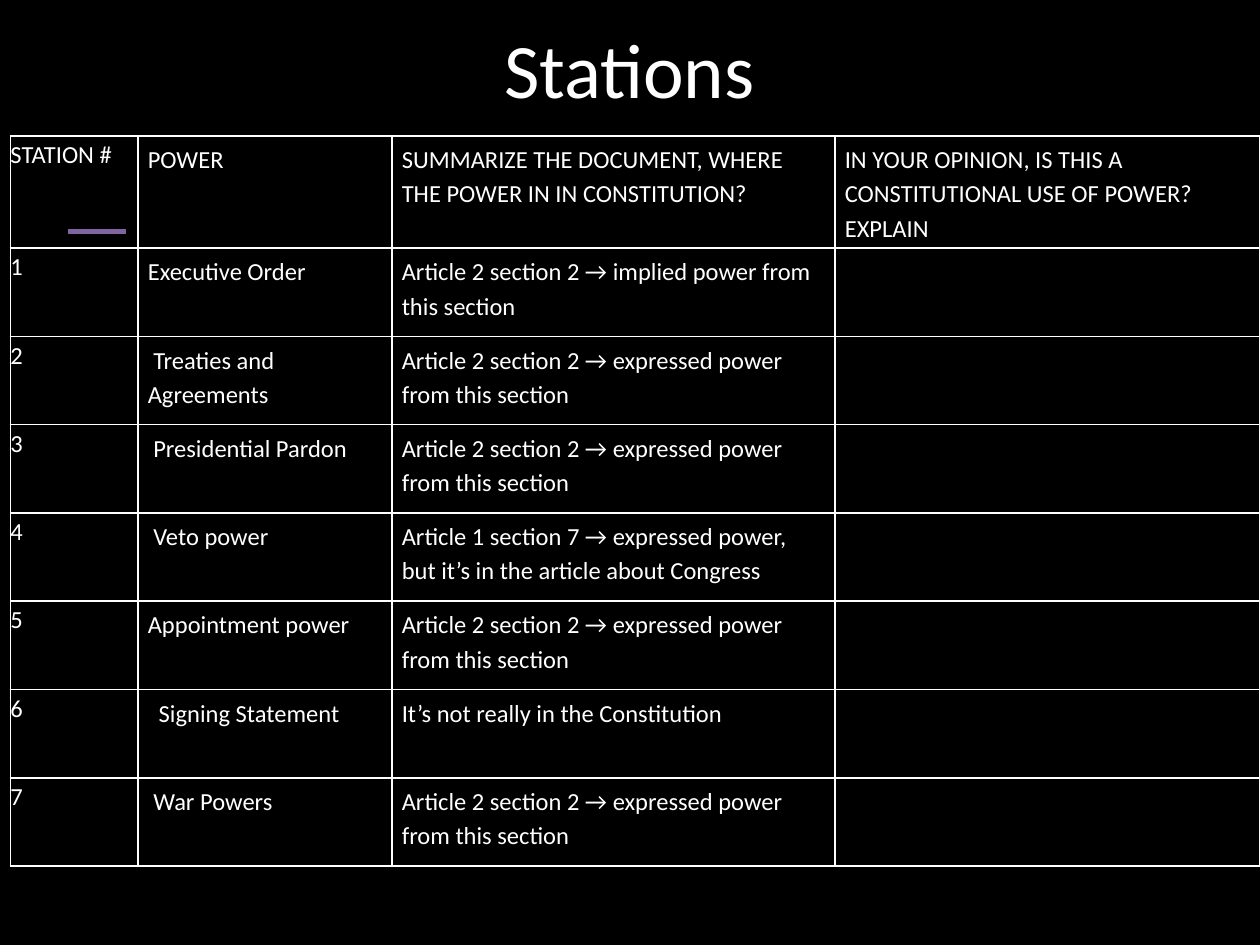
"""Build the Stations slide: a title above a table of presidential powers."""
from lxml import etree
from pptx import Presentation
from pptx.dml.color import RGBColor
from pptx.enum.shapes import MSO_CONNECTOR
from pptx.enum.text import MSO_ANCHOR, PP_ALIGN
from pptx.oxml.ns import qn
from pptx.util import Cm, Pt

STRAIGHT = MSO_CONNECTOR.STRAIGHT
BOTTOM = MSO_ANCHOR.BOTTOM
CENTER = PP_ALIGN.CENTER

COLORS = {"background": "000000", "text": "FFFFFF", "border": "FFFFFF", "accent": "8064A2"}
FONT = "Calibri"
SPACE_WIDTH = Cm(0.11)
COLUMN_WIDTHS = [2.57, 5.12, 8.93, 8.57]
HEADER_HEIGHT = 2.26
ROW_HEIGHT = 1.78

EXPRESSED = "Article 2 section 2 → expressed power from this section"
HEADERS = [
    "STATION #",
    "POWER",
    "SUMMARIZE THE DOCUMENT, WHERE THE POWER IN IN CONSTITUTION?",
    "IN YOUR OPINION, IS THIS A CONSTITUTIONAL USE OF POWER? EXPLAIN",
]
STATIONS = [
    ("Executive Order", 0, "Article 2 section 2 → implied power from this section"),
    ("Treaties and Agreements", 1, EXPRESSED),
    ("Presidential Pardon", 1, EXPRESSED),
    ("Veto power", 1, "Article 1 section 7 → expressed power, but it’s in the article about Congress"),
    ("Appointment power", 0, EXPRESSED),
    ("Signing Statement", 2, "It’s not really in the Constitution"),
    ("War Powers", 1, EXPRESSED),
]


def add_text(paragraph, text, size):
    run = paragraph.add_run()
    run.text = text
    run.font.name = FONT
    run.font.size = Pt(size)
    run.font.color.rgb = RGBColor.from_string(COLORS["text"])


def add_borders(cell):
    properties = cell._tc.get_or_add_tcPr()
    for side in ("lnL", "lnR", "lnT", "lnB"):
        line = etree.SubElement(properties, qn(f"a:{side}"), w=str(Pt(1)))
        fill = etree.SubElement(line, qn("a:solidFill"))
        etree.SubElement(fill, qn("a:srgbClr"), val=COLORS["border"])


presentation = Presentation()
presentation.slide_width = Cm(25.4)
presentation.slide_height = Cm(19.05)
slide = presentation.slides.add_slide(presentation.slide_layouts[6])
slide.background.fill.solid()
slide.background.fill.fore_color.rgb = RGBColor.from_string(COLORS["background"])

accent = slide.shapes.add_connector(STRAIGHT, Cm(1.37), Cm(4.67), Cm(2.54), Cm(4.67))
accent.line.color.rgb = RGBColor.from_string(COLORS["accent"])
accent.line.width = Pt(3)
etree.SubElement(accent._element.spPr, qn("a:effectLst"))

title = slide.shapes.add_textbox(Cm(1.07), Cm(0), Cm(23.24), Cm(2.54))
title_frame = title.text_frame
title_frame.word_wrap = True
title_frame.vertical_anchor = BOTTOM
title_frame.margin_left = title_frame.margin_right = Cm(0.25)
title_frame.margin_top = title_frame.margin_bottom = Cm(0.25)
title_frame.paragraphs[0].alignment = CENTER
add_text(title_frame.paragraphs[0], "Stations", 44)

row_heights = [HEADER_HEIGHT] + [ROW_HEIGHT] * len(STATIONS)
table = slide.shapes.add_table(
    len(row_heights), len(COLUMN_WIDTHS),
    Cm(0.21), Cm(2.74), Cm(sum(COLUMN_WIDTHS)), Cm(sum(row_heights)),
).table
table.first_row = False
table.horz_banding = False
for column, width in zip(table.columns, COLUMN_WIDTHS):
    column.width = Cm(width)
for row, height in zip(table.rows, row_heights):
    row.height = Cm(height)

rows = [HEADERS]
for number, (power, spaces, summary) in enumerate(STATIONS, start=1):
    rows.append([str(number), power, summary, ""])
    power_paragraph = table.cell(number, 1).text_frame.paragraphs[0]
    power_paragraph._p.get_or_add_pPr().set("indent", str(spaces * SPACE_WIDTH))

for row_index, texts in enumerate(rows):
    for column_index, text in enumerate(texts):
        cell = table.cell(row_index, column_index)
        cell.margin_left = cell.margin_right = Cm(0.2 if column_index else 0)
        cell.margin_top = cell.margin_bottom = Cm(0.1 if column_index else 0)
        add_borders(cell)
        cell.fill.background()
        if text:
            paragraph = cell.text_frame.paragraphs[0]
            paragraph.line_spacing = 1.15
            add_text(paragraph, text, 14)

presentation.save("out.pptx")
